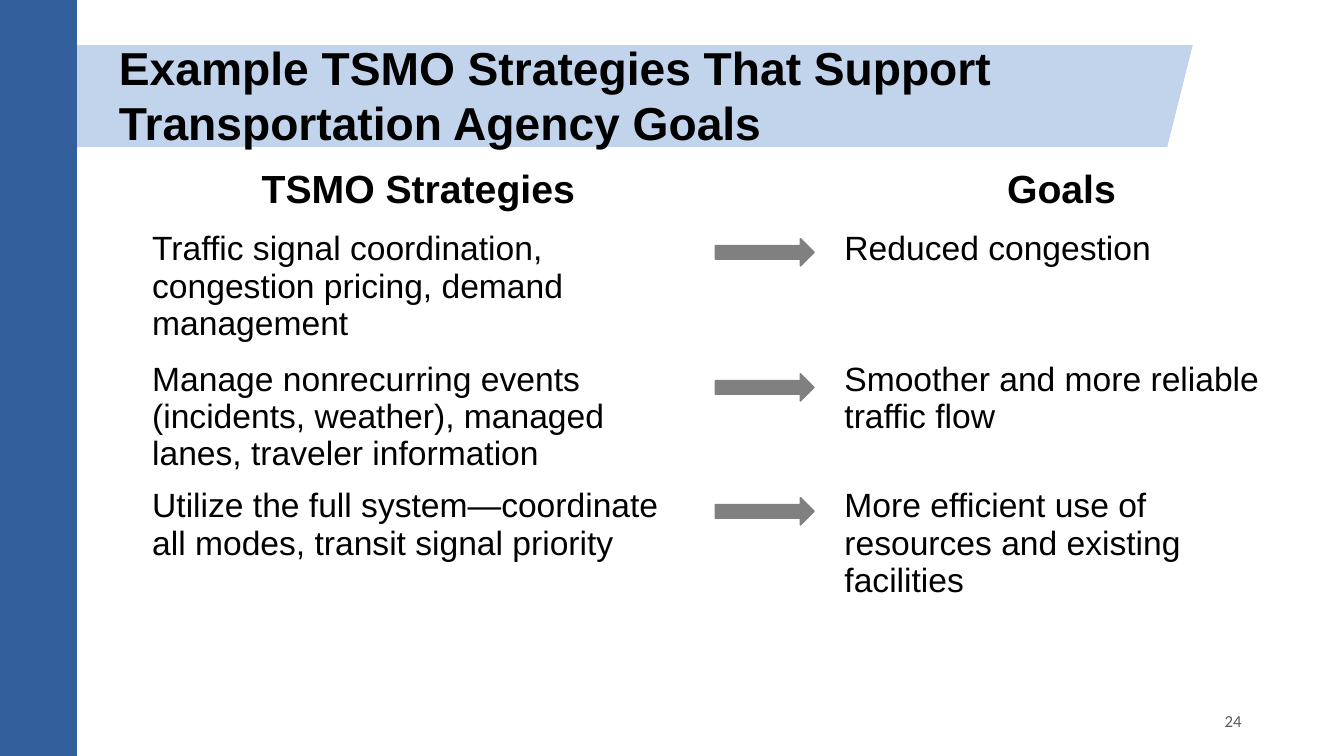
from dataclasses import dataclass

import pptx
import pptx.dml.color
import pptx.enum.shapes
import pptx.enum.text
import pptx.util

Pt = pptx.util.Pt
Shape = pptx.enum.shapes.MSO_SHAPE
Align = pptx.enum.text.PP_ALIGN
Anchor = pptx.enum.text.MSO_ANCHOR

BLACK, GREY, BAND_BLUE, SIDE_BLUE = "000000", "808080", "C2D4EC", "33609D"
TITLE = {"name": "Arial", "size": Pt(33), "bold": True}
HEADING = {"name": "Arial", "size": Pt(28), "bold": True}
BODY = {"name": "Arial", "size": Pt(24), "bold": False}
NUMBER = {"name": "Calibri", "size": Pt(12), "bold": False}

COLUMN_WIDTHS = (394.5, 100, 324.5)
HEADER_HEIGHT = 51
TABLE_LEFT, TABLE_TOP = 101.5, 110


@dataclass(frozen=True)
class Box:
    left: float
    top: float
    width: float
    height: float

    def lengths(self) -> tuple:
        return Pt(self.left), Pt(self.top), Pt(self.width), Pt(self.height)


@dataclass(frozen=True)
class Link:
    strategy: str
    goal: str
    row_height: float
    arrow_top: float


LINKS = (
    Link("Traffic signal coordination, congestion pricing, demand management",
         "Reduced congestion", 93, 170.5),
    Link("Manage nonrecurring events (incidents, weather), managed lanes, traveler information",
         "Smoother and more reliable traffic flow", 90.5, 267),
    Link("Utilize the full system—coordinate all modes, transit signal priority",
         "More efficient use of resources and existing facilities", 116, 355.5),
)


def colour(code: str) -> pptx.dml.color.RGBColor:
    return pptx.dml.color.RGBColor.from_string(code)


def write(frame, text: str, style: dict, ink: str = BLACK, align: Align = Align.LEFT) -> None:
    para = frame.paragraphs[0]
    para.alignment = align
    para.line_spacing = 1.0
    para.space_before = Pt(0)
    span = para.add_run()
    span.text = text
    for name, value in style.items():
        setattr(span.font, name, value)
    span.font.color.rgb = colour(ink)


def draw_shape(page, kind: Shape, box: Box, fill: str):
    """Add a filled preset shape without outline or shadow."""
    shape = page.shapes.add_shape(kind, *box.lengths())
    shape.shadow.inherit = False
    shape.fill.solid()
    shape.fill.fore_color.rgb = colour(fill)
    shape.line.fill.background()
    return shape


def draw_title(page) -> None:
    """Format the title and bring it in front of the band and the table."""
    title = page.shapes.title
    page.shapes.element.append(title.element)
    title.left, title.top, title.width, title.height = Box(77.75, 24.5, 708.5, 74).lengths()
    frame = title.text_frame
    frame.word_wrap = True
    frame.auto_size = pptx.enum.text.MSO_AUTO_SIZE.NONE
    frame.vertical_anchor = Anchor.TOP
    write(frame, "Example TSMO Strategies That Support Transportation Agency Goals", TITLE)


def draw_table(page) -> None:
    heights = (HEADER_HEIGHT, *(link.row_height for link in LINKS))
    box = Box(TABLE_LEFT, TABLE_TOP, sum(COLUMN_WIDTHS), sum(heights))
    table = page.shapes.add_table(len(heights), len(COLUMN_WIDTHS), *box.lengths()).table
    table.first_row = table.horz_banding = False
    for column, width in zip(table.columns, COLUMN_WIDTHS):
        column.width = Pt(width)
    for row, height in zip(table.rows, heights):
        row.height = Pt(height)
    for cell in table.iter_cells():
        cell.fill.background()

    for column, heading in ((0, "TSMO Strategies"), (2, "Goals")):
        cell = table.cell(0, column)
        cell.vertical_anchor = Anchor.MIDDLE
        write(cell.text_frame, heading, HEADING, align=Align.CENTER)
    for row, link in enumerate(LINKS, start=1):
        for column, text in ((0, link.strategy), (2, link.goal)):
            write(table.cell(row, column).text_frame, text, BODY)


def draw_arrows(page) -> None:
    for link in LINKS:
        arrow = draw_shape(page, Shape.RIGHT_ARROW, Box(511, link.arrow_top, 70.5, 19.5), GREY)
        arrow.line.color.rgb = colour(GREY)
        arrow.line.width = Pt(1)


def draw_page_number(page) -> None:
    frame = page.shapes.add_textbox(*Box(678, 500.5, 216, 29).lengths()).text_frame
    frame.word_wrap = True
    frame.vertical_anchor = Anchor.MIDDLE
    write(frame, "24", NUMBER, "595959", Align.RIGHT)


def main() -> None:
    deck = pptx.Presentation()
    deck.slide_width, deck.slide_height = Pt(960), Pt(540)
    page = deck.slides.add_slide(deck.slide_layouts[5])
    band = draw_shape(page, Shape.PARALLELOGRAM, Box(17.5, 32.25, 834.5, 72.75), BAND_BLUE)
    band.adjustments[0] = 0.25
    draw_shape(page, Shape.RECTANGLE, Box(0, 0, 55, 540), SIDE_BLUE)
    draw_table(page)
    draw_title(page)
    draw_arrows(page)
    draw_page_number(page)
    deck.save("out.pptx")


if __name__ == "__main__":
    main()
